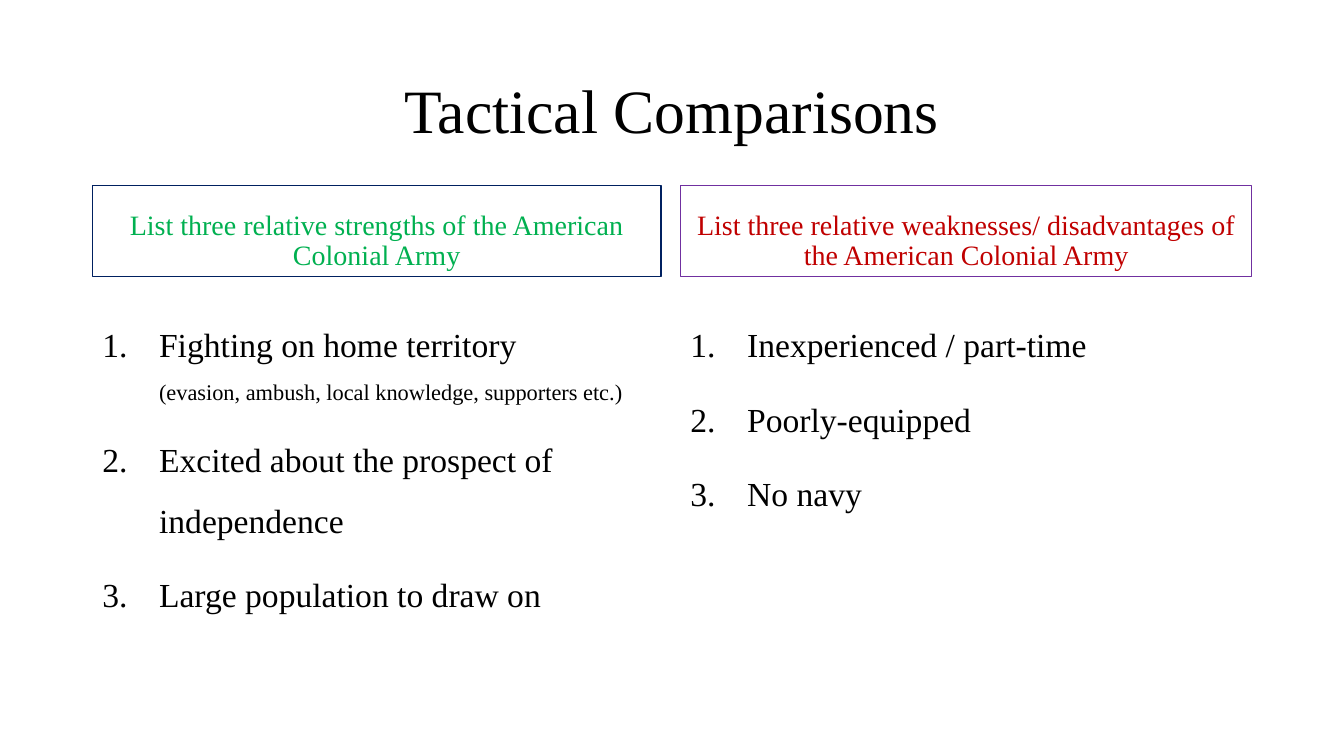
"""Build the Tactical Comparisons slide with two headed numbered lists."""
from lxml.etree import SubElement
from pptx import Presentation
from pptx.dml.color import RGBColor
from pptx.enum.shapes import MSO_SHAPE
from pptx.enum.text import MSO_ANCHOR, PP_ALIGN
from pptx.oxml.ns import qn
from pptx.util import Cm, Pt


def rgb(value):
    return RGBColor.from_string(value)


def style(p, size, color="000000"):
    for r in p.runs:
        r.font.name = "Times New Roman"
        r.font.size = Pt(size)
        r.font.color.rgb = rgb(color)


prs = Presentation()
prs.slide_width, prs.slide_height = Cm(33.87), Cm(19.05)
s = prs.slides.add_slide(prs.slide_layouts[5])

title = s.shapes.title
title.left, title.top, title.width, title.height = Cm(2.33), Cm(1.01), Cm(29.21), Cm(3.68)
tf = title.text_frame
tf.text = "Tactical Comparisons"
tf.vertical_anchor = MSO_ANCHOR.MIDDLE
p = tf.paragraphs[0]
p.alignment = PP_ALIGN.CENTER
p.line_spacing = 0.9
style(p, 44)

columns = [
    (2.33, 14.33, "002060", 1, "00B050",
     "List three relative strengths of the American Colonial Army",
     ["Fighting on home territory\v(evasion, ambush, local knowledge, supporters etc.)",
      "Excited about the prospect of independence",
      "Large population to draw on"]),
    (17.15, 14.4, "7030A0", 0.75, "C00000",
     "List three relative weaknesses/ disadvantages of the American Colonial Army",
     ["Inexperienced / part-time", "Poorly-equipped", "No navy"]),
]

for left, width, line, weight, color, heading, items in columns:
    sp = s.shapes.add_shape(MSO_SHAPE.RECTANGLE, Cm(left), Cm(4.68), Cm(width), Cm(2.29))
    sp.shadow.inherit = False
    sp.fill.background()
    sp.line.color.rgb = rgb(line)
    sp.line.width = Pt(weight)
    tf = sp.text_frame
    tf.word_wrap = True
    tf.vertical_anchor = MSO_ANCHOR.BOTTOM
    tf.text = heading
    p = tf.paragraphs[0]
    p.alignment = PP_ALIGN.CENTER
    p.line_spacing = 0.9
    style(p, 20, color)

    tf = s.shapes.add_textbox(Cm(left), Cm(7.54), Cm(width), Cm(9.4)).text_frame
    tf.word_wrap = True
    for i, item in enumerate(items):
        p = tf.paragraphs[0] if i == 0 else tf.add_paragraph()
        p.text = item
        p.line_spacing = 1.5
        if i > 0:
            p.space_before = Pt(10)
        pPr = p._p.get_or_add_pPr()
        pPr.set("marL", str(Cm(1.43)))
        pPr.set("indent", str(-Cm(1.43)))
        SubElement(pPr, qn("a:buAutoNum"), type="arabicPeriod")
        style(p, 24)
        for r in p.runs[1:]:
            r.font.size = Pt(16)

prs.save("out.pptx")
